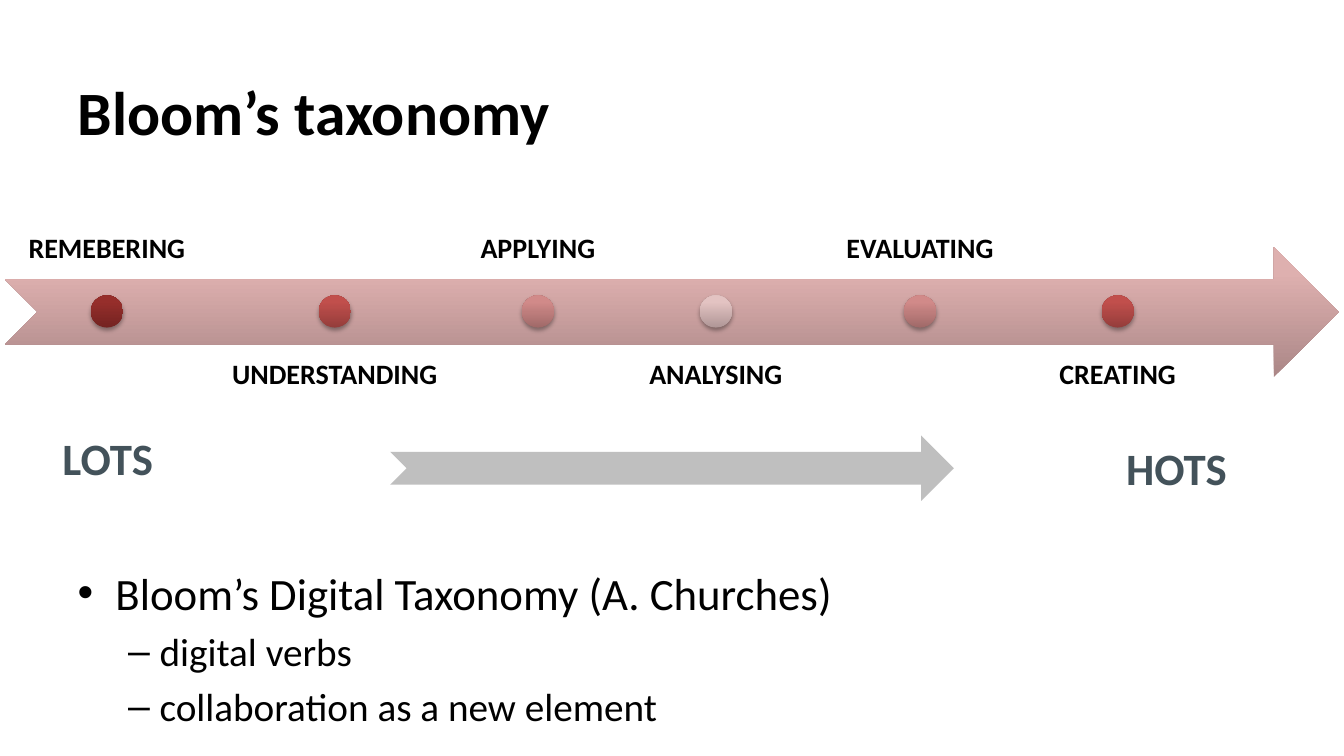
"""Build the Bloom's taxonomy slide."""
from lxml import etree
from pptx import Presentation
from pptx import util as u
from pptx.dml.color import RGBColor
from pptx.enum import shapes, text
from pptx.oxml import ns

FONT = "Calibri"
DARK_RED = ("742321", "962E2B")
RED = ("953D3B", "C14F4C")
ROSE = ("A16A69", "D18A89")
PALE = ("AF9696", "E3C3C2")
STEPS = [
    ("REMEBERING", 2.02, DARK_RED),
    ("UNDERSTANDING", 2.38, RED),
    ("APPLYING", 1.53, ROSE),
    ("ANALYSING", 1.88, PALE),
    ("EVALUATING", 2.05, ROSE),
    ("CREATING", 1.75, RED),
]
STEP_GAP = 0.06
DOT_SIZE = 0.32
BULLETS = [
    ("Bloom’s Digital Taxonomy (A. Churches)", 0, 32),
    ("digital verbs", 1, 28),
    ("collaboration as a new element", 1, 28),
]


def colour(value):
    """Return the colour for a hex string."""
    return RGBColor.from_string(value)


def style_font(para, size, bold=False, value="000000"):
    """Set the font of a paragraph."""
    para.font.name = FONT
    para.font.size = u.Pt(size)
    para.font.bold = bold
    para.font.color.rgb = colour(value)


def move(shape, left, top, width, height):
    """Place a shape, with lengths in inches."""
    shape.left, shape.top = u.Inches(left), u.Inches(top)
    shape.width, shape.height = u.Inches(width), u.Inches(height)


def add_plain_shape(page, kind, left, top, width, height):
    """Add a preset shape without line or shadow."""
    shape = page.shapes.add_shape(
        kind, u.Inches(left), u.Inches(top), u.Inches(width), u.Inches(height))
    shape.shadow.inherit = False
    shape.line.fill.background()
    return shape


def fill_gradient(shape, dark, light):
    """Shade a shape from dark at the bottom to light above."""
    shape.fill.gradient()
    shape.fill.gradient_angle = 90
    for stop, position, value in zip(shape.fill.gradient_stops, (0, 0.8), (dark, light)):
        stop.position = position
        stop.color.rgb = colour(value)


def add_shadow(shape):
    """Give a shape a soft shadow straight below it."""
    effects = shape.element.spPr.find(ns.qn("a:effectLst"))
    shadow = etree.SubElement(
        effects, ns.qn("a:outerShdw"), blurRad=str(u.Pt(3.1)), dist=str(u.Pt(1.8)),
        dir="5400000", rotWithShape="0")
    black = etree.SubElement(shadow, ns.qn("a:srgbClr"), val="000000")
    etree.SubElement(black, ns.qn("a:alpha"), val="35000")


def add_label(page, words, left, top, width, height, size, value="000000"):
    """Add a bold text box and return it."""
    box = page.shapes.add_textbox(
        u.Inches(left), u.Inches(top), u.Inches(width), u.Inches(height))
    frame = box.text_frame
    frame.word_wrap = True
    frame.vertical_anchor = text.MSO_ANCHOR.MIDDLE
    frame.text = words
    style_font(frame.paragraphs[0], size, True, value)
    return box


def add_step(page, words, left, width, shades, above):
    """Add a timeline dot with its label above or below the arrow."""
    box = add_label(page, words, left, 1.48 if above else 3.42, width, 1.29, 20)
    frame = box.text_frame
    frame.vertical_anchor = text.MSO_ANCHOR.BOTTOM if above else text.MSO_ANCHOR.TOP
    frame.margin_left = frame.margin_right = u.Inches(0.16)
    frame.margin_top = frame.margin_bottom = u.Inches(0.16)
    para = frame.paragraphs[0]
    para.alignment = text.PP_ALIGN.CENTER
    para.line_spacing = 0.9
    dot = add_plain_shape(page, shapes.MSO_SHAPE.OVAL,
                          left + (width - DOT_SIZE) / 2, 2.93, DOT_SIZE, DOT_SIZE)
    fill_gradient(dot, *shades)
    add_shadow(dot)


def add_timeline(page):
    """Add the large arrow and its six steps."""
    arrow = add_plain_shape(
        page, shapes.MSO_SHAPE.NOTCHED_RIGHT_ARROW, 0.05, 2.45, 13.23, 1.29)
    fill_gradient(arrow, "AB8787", "DEB0AF")
    left = 0.05
    for index, (words, width, shades) in enumerate(STEPS):
        add_step(page, words, left, width, shades, index % 2 == 0)
        left += width + STEP_GAP


def fill_title(title):
    """Write the slide title."""
    move(title, 0.67, 0.47, 12, 1.25)
    title.text_frame.text = "Bloom’s taxonomy"
    title.text_frame.vertical_anchor = text.MSO_ANCHOR.MIDDLE
    para = title.text_frame.paragraphs[0]
    para.alignment = text.PP_ALIGN.LEFT
    style_font(para, 44, True)


def fill_body(body):
    """Write the bullet list with the template's bullets."""
    move(body, 0.67, 5.56, 12, 1.91)
    frame = body.text_frame
    frame.auto_size = text.MSO_AUTO_SIZE.NONE
    frame.text = "\n".join(words for words, _, _ in BULLETS)
    for para, (_, level, size) in zip(frame.paragraphs, BULLETS):
        para.level = level
        style_font(para, size)


def main():
    """Build and save the slide."""
    deck = Presentation()
    deck.slide_width, deck.slide_height = u.Inches(13.33), u.Inches(7.5)
    page = deck.slides.add_slide(deck.slide_layouts[1])
    fill_title(page.shapes.title)
    fill_body(page.placeholders[1])
    add_timeline(page)
    add_label(page, "LOTS", 0.52, 4.07, 1.29, 0.94, 32, "43525A")
    add_label(page, "HOTS", 11.07, 4.17, 1.29, 0.94, 32, "43525A")
    arrow = add_plain_shape(
        page, shapes.MSO_SHAPE.NOTCHED_RIGHT_ARROW, 3.87, 4.32, 5.59, 0.65)
    arrow.fill.solid()
    arrow.fill.fore_color.rgb = colour("BFBFBF")
    deck.save("out.pptx")


if __name__ == "__main__":
    main()
